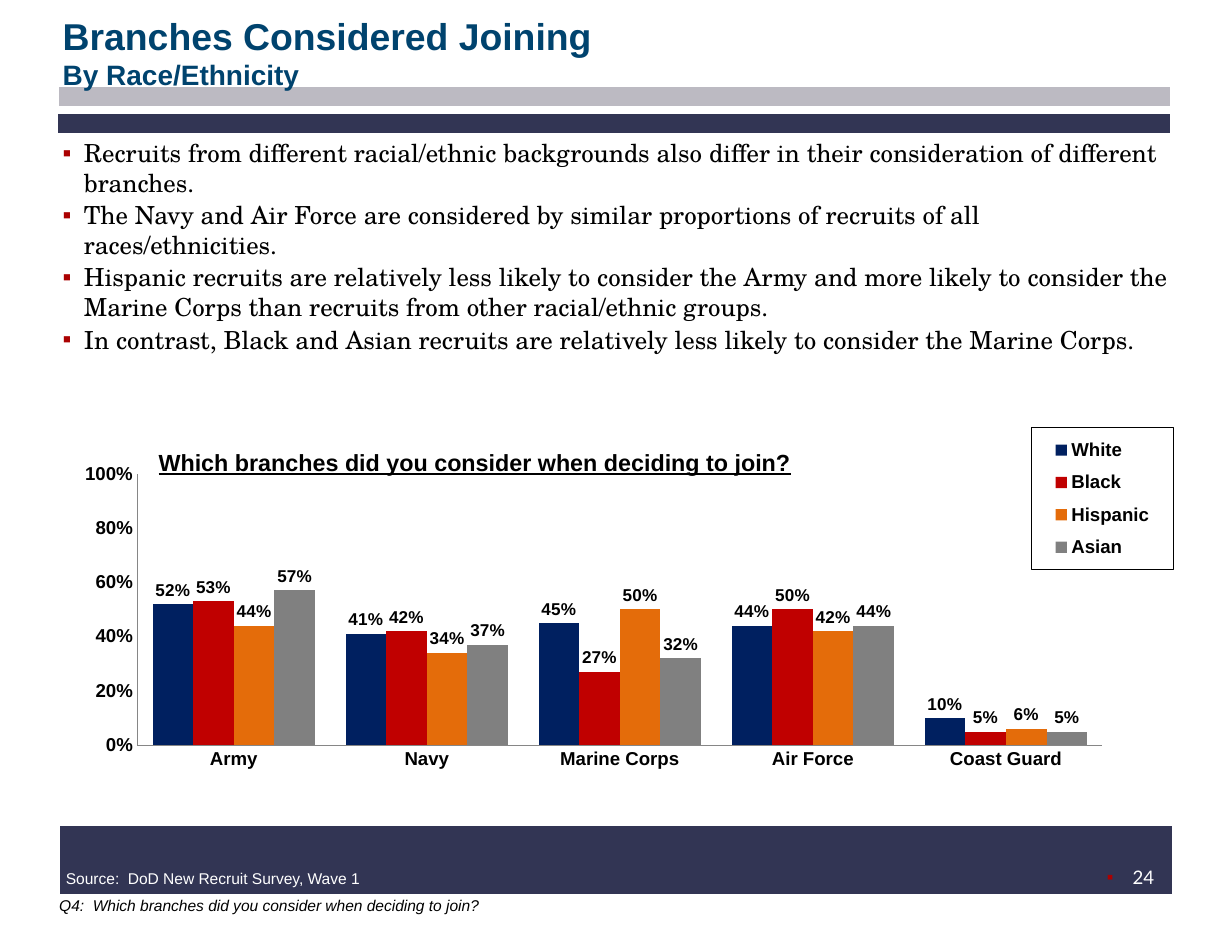
from dataclasses import dataclass
from typing import NamedTuple, Optional

from lxml.etree import SubElement
from pptx import Presentation
from pptx.chart.data import CategoryChartData
from pptx.dml.color import RGBColor
from pptx.enum.chart import XL_CHART_TYPE, XL_LABEL_POSITION, XL_LEGEND_POSITION, XL_TICK_MARK
from pptx.enum.shapes import MSO_CONNECTOR
from pptx.enum.text import MSO_ANCHOR, PP_ALIGN
from pptx.oxml import parse_xml
from pptx.oxml.ns import nsdecls, qn
from pptx.util import Inches, Pt


@dataclass(frozen=True)
class Theme:
    sans: str = "Arial"
    serif: str = "TeX Gyre Schola"
    number_font: str = "Lato"
    chart_font: str = "Times New Roman"
    navy: str = "323554"
    silver: str = "BCBAC2"
    title: str = "00436E"
    bullet: str = "AB0101"
    black: str = "000000"
    white: str = "FFFFFF"
    axis: str = "868686"
    title_size: int = 24
    subtitle_size: int = 18
    body_size: int = 16
    heading_size: int = 15
    axis_size: int = 12
    label_size: int = 11
    note_size: int = 10


THEME = Theme()


class Box(NamedTuple):
    left: float
    top: float
    width: float
    height: float


class Band(NamedTuple):
    left: float
    right: float
    middle: float
    color: str
    points: float


class Series(NamedTuple):
    name: str
    color: str
    values: tuple


BANDS = (
    Band(0.53, 10.45, 0.86, THEME.silver, 12),
    Band(0.54, 10.46, 7.68, THEME.navy, 44),
    Band(0.52, 10.45, 1.10, THEME.navy, 12),
)
BRANCHES = ("Army", "Navy", "Marine Corps", "Air Force", "Coast Guard")
GROUPS = (
    Series("White", "002060", (0.52, 0.41, 0.45, 0.44, 0.10)),
    Series("Black", "C00000", (0.53, 0.42, 0.27, 0.50, 0.05)),
    Series("Hispanic", "E46C0A", (0.44, 0.34, 0.50, 0.42, 0.06)),
    Series("Asian", "808080", (0.57, 0.37, 0.32, 0.44, 0.05)),
)
FINDINGS = (
    "Recruits from different racial/ethnic backgrounds also differ in their "
    "consideration of different branches.",
    "The Navy and Air Force are considered by similar proportions of recruits "
    "of all races/ethnicities.",
    "Hispanic recruits are relatively less likely to consider the Army and more likely "
    "to consider the Marine Corps than recruits from other racial/ethnic groups.",
    "In contrast, Black and Asian recruits are relatively less likely to consider "
    "the Marine Corps.",
)
QUESTION = "Which branches did you consider when deciding to join?"


def style_font(font, size: float, color: str = THEME.black, name: str = THEME.sans,
               bold: bool = False, italic: bool = False, underline: bool = False) -> None:
    font.size, font.name = Pt(size), name
    font.bold, font.italic, font.underline = bold, italic, underline
    font.color.rgb = RGBColor.from_string(color)


def add_frame(slide, box: Box, insets: tuple = (0.1, 0.05, 0.1, 0.05),
              anchor: MSO_ANCHOR = MSO_ANCHOR.TOP):
    frame = slide.shapes.add_textbox(*map(Inches, box)).text_frame
    frame.word_wrap = True
    frame.vertical_anchor = anchor
    (frame.margin_left, frame.margin_top,
     frame.margin_right, frame.margin_bottom) = map(Inches, insets)
    return frame


def add_text(frame, text: str, *, align: PP_ALIGN = PP_ALIGN.LEFT, margin: float = 0,
             hanging: float = 0, space_before: float = 0,
             bullet: Optional[str] = None, **font_format) -> None:
    first = frame.paragraphs[0]
    paragraph = frame.add_paragraph() if first.runs else first
    paragraph.alignment = align
    paragraph.space_before = Pt(space_before if paragraph is not first else 0)
    properties = paragraph._p.get_or_add_pPr()
    properties.set("marL", str(Inches(margin)))
    properties.set("indent", str(-Inches(hanging)))
    if bullet:
        color = SubElement(properties, qn("a:buClr"))
        SubElement(color, qn("a:srgbClr"), val=THEME.bullet)
        SubElement(properties, qn("a:buFont"), typeface=THEME.sans)
        SubElement(properties, qn("a:buChar"), char=bullet)
    run = paragraph.add_run()
    run.text = text
    style_font(run.font, **font_format)


def add_band(slide, band: Band) -> None:
    middle = Inches(band.middle)
    line = slide.shapes.add_connector(
        MSO_CONNECTOR.STRAIGHT, Inches(band.left), middle, Inches(band.right), middle)
    line.line.color.rgb = RGBColor.from_string(band.color)
    line.line.width = Pt(band.points)
    SubElement(line._element.spPr, qn("a:effectLst"))


def make_layout(box: Box, inner: bool = False):
    target = '<c:layoutTarget val="inner"/>' if inner else ""
    return parse_xml(
        f'<c:layout {nsdecls("c")}><c:manualLayout>{target}'
        '<c:xMode val="edge"/><c:yMode val="edge"/>'
        f'<c:x val="{box.left}"/><c:y val="{box.top}"/>'
        f'<c:w val="{box.width}"/><c:h val="{box.height}"/>'
        '</c:manualLayout></c:layout>')


def add_branch_chart(slide, box: Box) -> None:
    data = CategoryChartData(number_format="0%")
    data.categories = BRANCHES
    for group in GROUPS:
        data.add_series(group.name, group.values)
    chart = slide.shapes.add_chart(
        XL_CHART_TYPE.COLUMN_CLUSTERED, *map(Inches, box), data).chart
    chart.has_title = False
    style_font(chart.font, 18, name=THEME.chart_font)

    # Columns and value labels
    plot = chart.plots[0]
    plot.gap_width, plot.overlap, plot.vary_by_categories = 75, 0, False
    for series, group in zip(plot.series, GROUPS):
        series.format.fill.solid()
        series.format.fill.fore_color.rgb = RGBColor.from_string(group.color)
        labels = series.data_labels
        labels.show_value = True
        labels.number_format, labels.number_format_is_linked = "0%", False
        labels.position = XL_LABEL_POSITION.OUTSIDE_END
        style_font(labels.font, THEME.label_size, bold=True)

    # Axes
    for axis in (chart.category_axis, chart.value_axis):
        axis.major_tick_mark = axis.minor_tick_mark = XL_TICK_MARK.NONE
        axis.has_major_gridlines = False
        axis.format.line.color.rgb = RGBColor.from_string(THEME.axis)
        style_font(axis.tick_labels.font, THEME.axis_size, bold=True)
    scale = chart.value_axis
    scale.minimum_scale, scale.maximum_scale, scale.major_unit = 0, 1, 0.2
    scale.tick_labels.number_format = "0%"
    scale.tick_labels.number_format_is_linked = False

    # Boxed legend and plot position, as fractions of the chart
    chart.has_legend = True
    legend = chart.legend
    legend.position, legend.include_in_layout = XL_LEGEND_POSITION.BOTTOM, False
    style_font(legend.font, THEME.axis_size, bold=True)
    for part, layout in ((legend._element, make_layout(Box(0.83, 0.04, 0.12, 0.34))),
                         (chart._chartSpace.chart.plotArea,
                          make_layout(Box(0.07, 0.15, 0.82, 0.65), inner=True))):
        for old in part.findall(qn("c:layout")):
            part.remove(old)
        part.insert(1 if part is legend._element else 0, layout)
    legend._element.find(qn("c:overlay")).addnext(parse_xml(
        f'<c:spPr {nsdecls("c", "a")}><a:ln w="{Pt(0.75)}"><a:solidFill>'
        f'<a:srgbClr val="{THEME.black}"/></a:solidFill></a:ln></c:spPr>'))


def main() -> None:
    presentation = Presentation()
    presentation.slide_width, presentation.slide_height = Inches(11), Inches(8.5)
    slide = presentation.slides.add_slide(presentation.slide_layouts[6])

    for band in BANDS:
        add_band(slide, band)
    add_branch_chart(slide, Box(0.49, 3.67, 10.51, 3.73))

    # Page number
    add_text(add_frame(slide, Box(9.6, 7.68, 1.17, 0.58), (0.1, 0.05, 0.28, 0.05)), "24",
             align=PP_ALIGN.CENTER, margin=0.23, hanging=0.23, bullet="▪",
             size=THEME.axis_size, color=THEME.white, name=THEME.number_font)

    # Findings
    findings = add_frame(slide, Box(0.5, 1.17, 10, 1.42), (0.06,) * 4)
    for finding in FINDINGS:
        add_text(findings, finding, margin=0.19, hanging=0.19, bullet="▪",
                 space_before=1.6, size=THEME.body_size, name=THEME.serif)

    # Question note, source and chart heading
    add_text(add_frame(slide, Box(0.24, 7.95, 10.21, 0.27)), f"Q4:  {QUESTION}",
             margin=0.19, size=THEME.note_size, italic=True)
    add_text(add_frame(slide, Box(0.49, 7.71, 5.5, 0.27)),
             "Source:  DoD New Recruit Survey, Wave 1",
             margin=0.42, hanging=0.42, size=THEME.note_size, color=THEME.white)
    add_text(add_frame(slide, Box(1.27, 3.95, 5.94, 0.45)), QUESTION,
             align=PP_ALIGN.CENTER, size=THEME.heading_size, bold=True, underline=True)

    # Title
    title = add_frame(slide, Box(0.5, 0.18, 10.05, 0.57), (0.06,) * 4, MSO_ANCHOR.MIDDLE)
    for text, size in (("Branches Considered Joining", THEME.title_size),
                       ("By Race/Ethnicity", THEME.subtitle_size)):
        add_text(title, text, size=size, color=THEME.title, bold=True)

    presentation.save("out.pptx")


if __name__ == "__main__":
    main()
